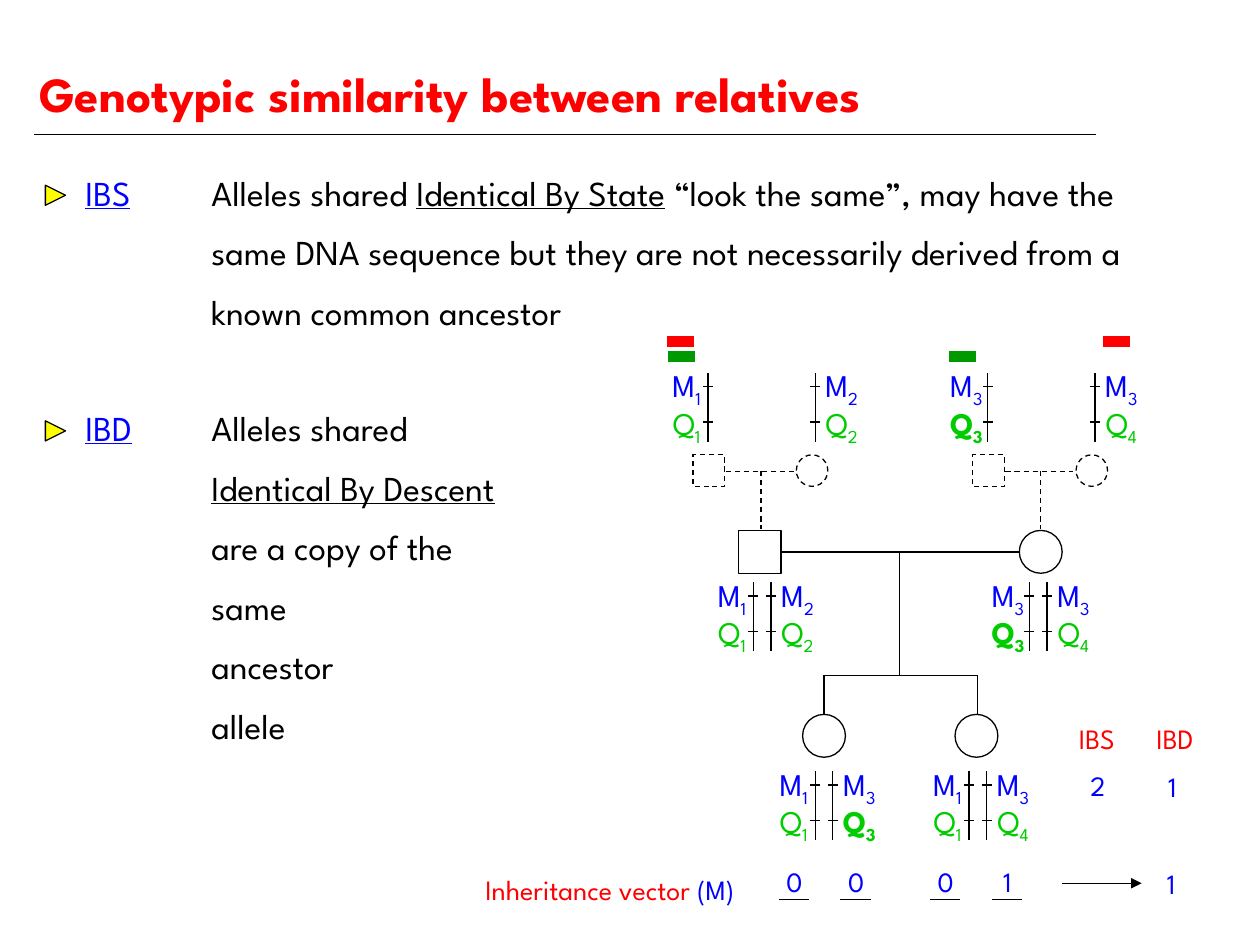
from dataclasses import dataclass

from lxml.etree import SubElement
from pptx import Presentation
from pptx.dml.color import RGBColor
from pptx.enum.dml import MSO_LINE
from pptx.enum.shapes import MSO_CONNECTOR, MSO_SHAPE
from pptx.enum.text import MSO_ANCHOR, PP_ALIGN
from pptx.oxml.ns import qn
from pptx.util import Inches, Pt


@dataclass(frozen=True)
class Theme:
    """Colours, font and type sizes of the slide."""
    font: str = "League Spartan"
    black: str = "000000"
    red: str = "FF0000"
    blue: str = "0000FF"
    green: str = "00CC00"
    dark_green: str = "009900"
    yellow: str = "FFFF00"
    title: int = 28
    body: int = 20
    allele: int = 18
    score: int = 16
    line: float = 0.75
    bar: float = 6


T = Theme()


def rgb(value):
    """Turn a hex string into a colour."""
    return RGBColor.from_string(value)


def write(p, pieces, size, align=PP_ALIGN.LEFT, spacing=None, tab=None):
    """Fill a paragraph with (text, colour, marks) pieces; marks are b, u or s for subscript."""
    p.alignment = align
    p.line_spacing = spacing
    pPr = p._p.get_or_add_pPr()
    SubElement(SubElement(pPr, qn("a:spcBef")), qn("a:spcPct")).set("val", "50000")
    if tab:
        stop = SubElement(SubElement(pPr, qn("a:tabLst")), qn("a:tab"))
        stop.set("pos", str(Inches(tab)))
        stop.set("algn", "l")
    for text, color, marks in pieces:
        r = p.add_run()
        r.text = text
        r.font.name, r.font.size = T.font, Pt(size)
        r.font.bold, r.font.underline = "b" in marks, "u" in marks
        r.font.color.rgb = rgb(color)
        if "s" in marks:
            r._r.get_or_add_rPr().set("baseline", "-25000")


def textbox(s, x, y, w, h, paragraphs, size, align=PP_ALIGN.CENTER, wrap=False, tab=None):
    """Add a text box holding one list of pieces per paragraph."""
    tf = s.shapes.add_textbox(Inches(x), Inches(y), Inches(w), Inches(h)).text_frame
    tf.word_wrap = wrap
    for i, pieces in enumerate(paragraphs):
        write(tf.add_paragraph() if i else tf.paragraphs[0], pieces, size, align, tab=tab)


def line(s, x1, y1, x2, y2, color=T.black, width=T.line, dashed=False, arrow=False):
    """Draw a straight line, dashed or with an arrowhead if asked."""
    c = s.shapes.add_connector(MSO_CONNECTOR.STRAIGHT, Inches(x1), Inches(y1), Inches(x2), Inches(y2))
    c.line.color.rgb = rgb(color)
    c.line.width = Pt(width)
    if dashed:
        c.line.dash_style = MSO_LINE.DASH
    if arrow:
        SubElement(c.line._get_or_add_ln(), qn("a:tailEnd")).set("type", "triangle")
    SubElement(c._element.spPr, qn("a:effectLst"))


def symbol(s, kind, x, y, size, fill=None, dashed=False):
    """Draw an outlined preset shape of equal width and height."""
    sp = s.shapes.add_shape(kind, Inches(x), Inches(y), Inches(size), Inches(size))
    sp.shadow.inherit = False
    if fill:
        sp.fill.solid()
        sp.fill.fore_color.rgb = rgb(fill)
    else:
        sp.fill.background()
    sp.line.color.rgb = rgb(T.black)
    sp.line.width = Pt(T.line)
    if dashed:
        sp.line.dash_style = MSO_LINE.DASH
    return sp


def strand(s, x, y, m, q, left, bold=False):
    """Draw a chromosome strand with its marker and QTL alleles on one side."""
    line(s, x, y, x, y + 0.55)
    for tick in (0.11, 0.39):
        line(s, x - 0.04, y + tick, x + 0.04, y + tick)
    center = x - 0.17 if left else x + 0.21
    mark = "b" if bold else ""
    for letter, number, color, dy, style in (("M", m, T.blue, -0.1, ""), ("Q", q, T.green, 0.2, mark)):
        pieces = [(letter, color, style), (str(number), color, style + "s")]
        textbox(s, center - 0.28, y + dy, 0.56, 0.4, [pieces], T.allele)


def add_title(s, x, y, w, h):
    """Place the title and the rule under it."""
    sp = s.shapes.title
    sp.left, sp.top, sp.width, sp.height = Inches(x), Inches(y), Inches(w), Inches(h)
    sp.text_frame.word_wrap = True
    sp.text_frame.vertical_anchor = MSO_ANCHOR.TOP
    write(sp.text_frame.paragraphs[0], [("Genotypic similarity between relatives", T.red, "b")],
          T.title, spacing=1.5)
    line(s, x + 0.06, y + 0.85, x + 8.49, y + 0.85)


def add_definition(s, x, y, w, h, term, paragraphs):
    """Place a bulleted term and its tabbed explanation."""
    symbol(s, MSO_SHAPE.ISOSCELES_TRIANGLE, x, y + 0.16, 0.16, T.yellow).rotation = 90
    first, *rest = [[(text, T.black, marks) for text, marks in p] for p in paragraphs]
    head = [(term, T.blue, "u"), (" \t", T.blue, "")]
    body = [[("\t", T.black, "")] + p for p in rest]
    textbox(s, x + 0.22, y, w - 0.22, h, [head + first] + body, T.body, PP_ALIGN.LEFT, True, 1)


def add_grandparents(s, x, y, father, mother, bold=False):
    """Place a dashed couple, its descent line and one strand for each."""
    strand(s, x + 0.12, y - 0.65, *father, True, bold)
    strand(s, x + 0.97, y - 0.65, *mother, False)
    symbol(s, MSO_SHAPE.RECTANGLE, x, y, 0.25, dashed=True)
    symbol(s, MSO_SHAPE.OVAL, x + 0.82, y, 0.25, dashed=True)
    line(s, x + 0.26, y + 0.13, x + 0.8, y + 0.13, dashed=True)
    line(s, x + 0.54, y + 0.13, x + 0.54, y + 0.59, dashed=True)


def add_person(s, kind, x, y, middle, gap, alleles, bold):
    """Place a person above a pair of strands; bold is the index of the bold one."""
    symbol(s, kind, x, y, 0.34)
    for i, pair in enumerate(alleles):
        strand(s, x + middle + (0.07 if i else -0.07), y + gap, *pair, i == 0, i == bold)


def add_pedigree(s, x, y):
    """Place three generations with their alleles and the shared segment bars."""
    add_grandparents(s, x + 0.5, y + 1.11, (1, 1), (2, 2))
    add_grandparents(s, x + 2.72, y + 1.11, (3, 3), (3, 4), True)
    for kind, px, py, middle, gap, alleles, bold in (
        (MSO_SHAPE.RECTANGLE, 0.86, 1.71, 0.19, 0.41, ((1, 1), (2, 2)), None),
        (MSO_SHAPE.OVAL, 3.09, 1.71, 0.15, 0.41, ((3, 3), (3, 4)), 0),
        (MSO_SHAPE.OVAL, 1.37, 3.17, 0.17, 0.45, ((1, 1), (3, 3)), 1),
        (MSO_SHAPE.OVAL, 2.58, 3.17, 0.18, 0.45, ((1, 1), (3, 4)), None),
    ):
        add_person(s, kind, x + px, y + py, middle, gap, alleles, bold)
    for x1, y1, x2, y2 in ((1.2, 1.88, 3.09, 1.88), (2.14, 1.88, 2.14, 2.86), (1.54, 2.86, 2.76, 2.86),
                           (1.54, 2.86, 1.54, 3.17), (2.76, 2.86, 2.76, 3.17)):
        line(s, x + x1, y + y1, x + x2, y + y2)
    for bx, by, color in ((0.29, 0.21, T.red), (3.75, 0.21, T.red),
                          (0.3, 0.33, T.dark_green), (2.53, 0.33, T.dark_green)):
        line(s, x + bx, y + by, x + bx + 0.22, y + by, color, T.bar)


def add_scores(s, x, y):
    """Place the IBS and IBD counts of the sib pair."""
    for text, dx, dy, color in (("IBS", 0, 0, T.red), ("IBD", 0.62, 0, T.red),
                                ("2", 0.01, 0.37, T.blue), ("1", 0.6, 0.38, T.blue)):
        textbox(s, x + dx, y + dy, 0.71, 0.37, [[(text, color, "")]], T.score)


def add_vector(s, x, y):
    """Place the inheritance vector, its digits on rules and the resulting count."""
    label = [("Inheritance vector ", T.red, ""), ("(M)", T.blue, "")]
    textbox(s, x, y + 0.07, 2.52, 0.37, [label], T.score)
    for digit, dx in (("0", 2.6), ("0", 3.09), ("0", 3.8), ("1", 4.29)):
        line(s, x + dx, y + 0.33, x + dx + 0.24, y + 0.33)
        textbox(s, x + dx - 0.23, y, 0.71, 0.37, [[(digit, T.blue, "")]], T.score)
    line(s, x + 4.85, y + 0.2, x + 5.48, y + 0.2, arrow=True)
    textbox(s, x + 5.36, y + 0.02, 0.71, 0.37, [[("1", T.blue, "")]], T.score)


def main():
    """Build the slide and save it."""
    prs = Presentation()
    prs.slide_width, prs.slide_height = Inches(10), Inches(7.5)
    s = prs.slides.add_slide(prs.slide_layouts[5])
    add_title(s, 0.21, 0.22, 9.36, 0.8)
    add_definition(s, 0.36, 1.31, 9.37, 1.43, "IBS", [
        [("Alleles shared ", ""), ("Identical By State", "u"), (" “look the same”, may have the", "")],
        [("same DNA sequence but they are not necessarily derived from a", "")],
        [("known common ancestor", "")]])
    add_definition(s, 0.36, 3.18, 4.87, 2.93, "IBD", [
        [("Alleles shared", "")], [("Identical By Descent", "u")],
        *([(text, "")] for text in ("are a copy of the", "same", "ancestor", "allele"))])
    add_pedigree(s, 5, 2.5)
    add_scores(s, 8.35, 5.68)
    add_vector(s, 3.58, 6.81)
    prs.save("out.pptx")


if __name__ == "__main__":
    main()
